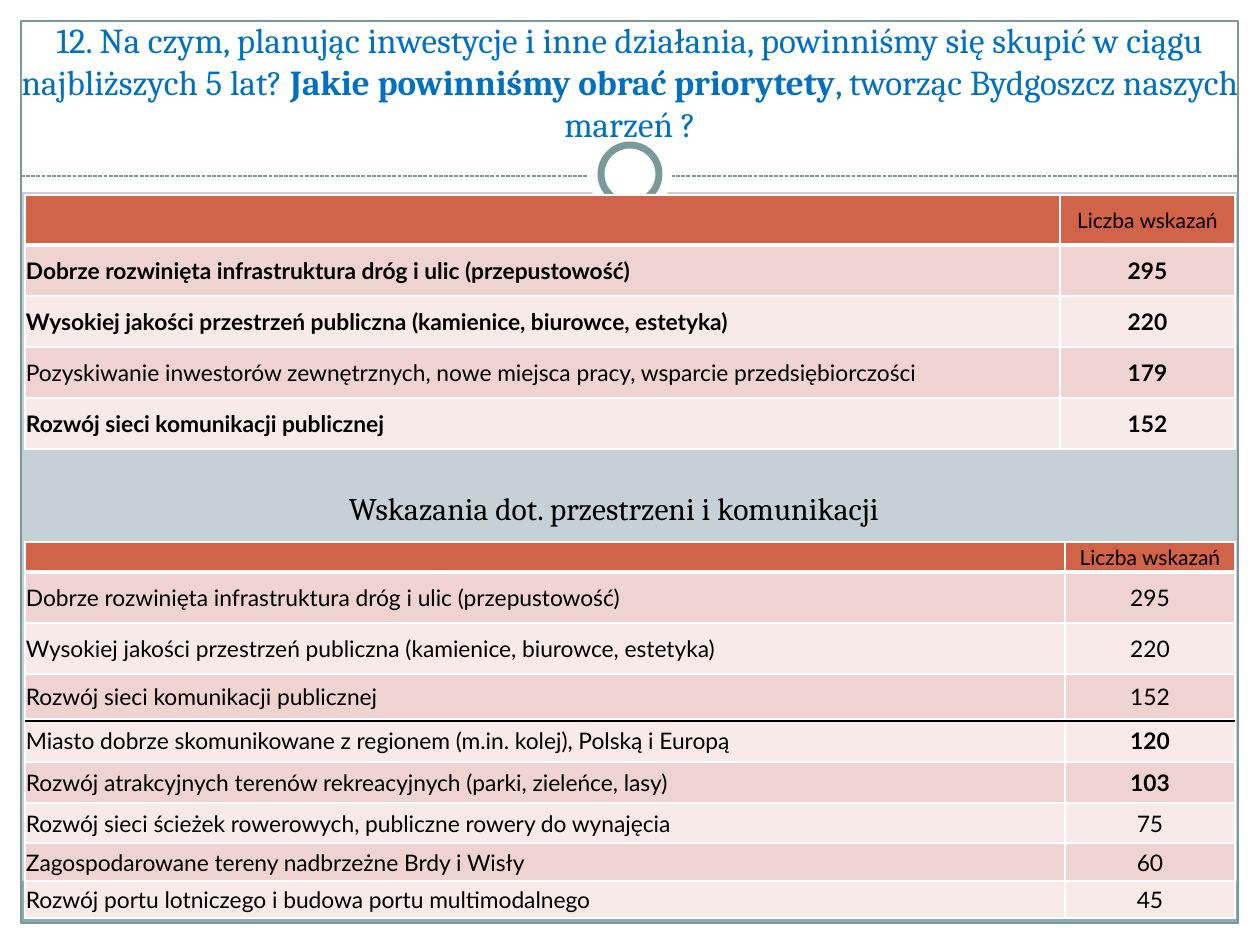
from lxml import etree
from pptx import Presentation
from pptx.dml.color import RGBColor
from pptx.enum import dml, shapes, text
from pptx.oxml.ns import qn
from pptx.util import Pt

PX = 914400 / 126
WHITE = RGBColor(0xFF, 0xFF, 0xFF)
BLACK = RGBColor(0, 0, 0)
BACKDROP = RGBColor(0xC5, 0xD1, 0xD7)
FOOTER = RGBColor(0x8C, 0xAD, 0xAE)
FRAME = RGBColor(0x7C, 0x99, 0x9A)
BLUE = RGBColor(0x00, 0x70, 0xC0)
HEADER = RGBColor(0xD1, 0x63, 0x49)
BANDS = [RGBColor(0xEE, 0xD3, 0xD0), RGBColor(0xF7, 0xEA, 0xE9)]

# Content
TITLE = [
    ("12. Na czym, planując inwestycje i inne działania, powinniśmy się skupić "
     "w ciągu najbliższych 5 lat? ", False),
    ("Jakie powinniśmy obrać priorytety", True),
    (", tworząc Bydgoszcz naszych marzeń ?", False),
]
SUBTITLE = "Wskazania dot. przestrzeni i komunikacji"
COUNT_LABEL = "Liczba wskazań"
ROADS = "Dobrze rozwinięta infrastruktura dróg i ulic (przepustowość)"
PUBLIC_SPACE = "Wysokiej jakości przestrzeń publiczna (kamienice, biurowce, estetyka)"
TRANSIT = "Rozwój sieci komunikacji publicznej"

# Rows: label, count, label bold, count bold, height
PRIORITIES = [
    (ROADS, 295, True, True, 51),
    (PUBLIC_SPACE, 220, True, True, 51),
    ("Pozyskiwanie inwestorów zewnętrznych, nowe miejsca pracy, wsparcie "
     "przedsiębiorczości", 179, False, True, 51),
    (TRANSIT, 152, True, True, 51),
]
SPACE_AND_TRANSIT = [
    (ROADS, 295, False, False, 51),
    (PUBLIC_SPACE, 220, False, False, 51),
    (TRANSIT, 152, False, False, 45),
    ("Miasto dobrze skomunikowane z regionem (m.in. kolej), Polską i Europą",
     120, False, True, 43),
    ("Rozwój atrakcyjnych terenów rekreacyjnych (parki, zieleńce, lasy)",
     103, False, True, 41),
    ("Rozwój sieci ścieżek rowerowych, publiczne rowery do wynajęcia",
     75, False, False, 40),
    ("Zagospodarowane tereny nadbrzeżne Brdy i Wisły", 60, False, False, 38),
    ("Rozwój portu lotniczego i budowa portu multimodalnego", 45, False, False, 37),
]

# Shapes: kind, left, top, width, height, fill, line colour, line width
RECT, OVAL = shapes.MSO_SHAPE.RECTANGLE, shapes.MSO_SHAPE.OVAL
DECOR = [
    (RECT, 0, 924, 1260, 21, WHITE, None, 0),
    (RECT, 0, 0, 1260, 192, WHITE, None, 0),
    (RECT, 0, 0, 21, 945, WHITE, None, 0),
    (RECT, 1239, 0, 21, 945, WHITE, None, 0),
    (RECT, 21, 881, 1217, 43, FOOTER, None, 0),
    (RECT, 21, 21, 1217, 902, None, FRAME, 0.75),
]
RINGS = [
    (OVAL, 588, 132, 84, 84, WHITE, None, 0),
    (OVAL, 601, 145, 58, 58, WHITE, FRAME, 4),
]


def px(*values):
    return [round(value * PX) for value in values]


def add_span(para, words, font, size, color, bold=False):
    span = para.add_run()
    span.text = words
    span.font.name, span.font.size, span.font.bold = font, Pt(size), bold
    span.font.color.rgb = color


def add_decor(page, kind, left, top, width, height, fill, line, weight):
    shape = page.shapes.add_shape(kind, *px(left, top, width, height))
    shape.shadow.inherit = False
    if fill is None:
        shape.fill.background()
    else:
        shape.fill.solid()
        shape.fill.fore_color.rgb = fill
    if line is None:
        shape.line.fill.background()
    else:
        shape.line.color.rgb = line
        shape.line.width = Pt(weight)


def add_rule(page, left, right, y, color, weight):
    rule = page.shapes.add_connector(
        shapes.MSO_CONNECTOR.STRAIGHT, *px(left, y, right, y))
    rule.line.color.rgb = color
    rule.line.width = Pt(weight)
    etree.SubElement(rule.element.spPr, qn("a:effectLst"))
    return rule


def format_cell(cell, words, bold, size, fill, centred, bottom_weight):
    # Borders come before the fill in the cell properties
    props = cell._tc.get_or_add_tcPr()
    for side, weight in zip("LRTB", (1, 1, 1, bottom_weight)):
        edge = etree.SubElement(props, qn(f"a:ln{side}"), w=str(Pt(weight)))
        paint = etree.SubElement(edge, qn("a:solidFill"))
        etree.SubElement(paint, qn("a:srgbClr"), val=str(WHITE))
    cell.fill.solid()
    cell.fill.fore_color.rgb = fill
    cell.margin_left, cell.margin_right, cell.margin_top = px(1, 1, 1)
    cell.margin_bottom = 0
    cell.vertical_anchor = text.MSO_ANCHOR.MIDDLE
    para = cell.text_frame.paragraphs[0]
    para.alignment = text.PP_ALIGN.CENTER if centred else text.PP_ALIGN.LEFT
    if words:
        add_span(para, words, "Lato", size, BLACK, bold)
    else:
        etree.SubElement(para._p, qn("a:endParaRPr"), sz=str(size * 100))


def add_count_table(page, top, columns, header_height, rows):
    heights = [header_height] + [row[-1] for row in rows]
    frame = page.shapes.add_table(
        len(heights), 2, *px(25, top, sum(columns), sum(heights)))
    table = frame.table
    table.first_row = table.horz_banding = False
    for column, width in zip(table.columns, px(*columns)):
        column.width = width
    for row, height in zip(table.rows, px(*heights)):
        row.height = height
    for index, words in enumerate(("", COUNT_LABEL)):
        format_cell(table.cell(0, index), words, False, 12, HEADER, index == 1, 3)
    for index, (label, count, label_bold, count_bold, _) in enumerate(rows):
        fill = BANDS[index % 2]
        format_cell(table.cell(index + 1, 0), label, label_bold, 13, fill, False, 1)
        format_cell(table.cell(index + 1, 1), str(count), count_bold, 13, fill, True, 1)


def main():
    deck = Presentation()
    deck.slide_width, deck.slide_height = px(1260, 945)
    page = deck.slides.add_slide(deck.slide_layouts[5])
    page.background.fill.solid()
    page.background.fill.fore_color.rgb = BACKDROP

    # Frame, dashed divider and ring
    for part in DECOR:
        add_decor(page, *part)
    divider = add_rule(page, 21, 1239, 176, FRAME, 0.75)
    divider.line.dash_style = dml.MSO_LINE.SQUARE_DOT
    for part in RINGS:
        add_decor(page, *part)

    # Title, raised above the white band
    title = page.shapes.title
    title.element.getparent().append(title.element)
    title.left, title.top, title.width, title.height = px(0, 46, 1260, 105)
    title.text_frame.auto_size = text.MSO_AUTO_SIZE.NONE
    title.text_frame.vertical_anchor = text.MSO_ANCHOR.BOTTOM
    para = title.text_frame.paragraphs[0]
    para.alignment = text.PP_ALIGN.CENTER
    for words, bold in TITLE:
        add_span(para, words, "Cambria", 20, BLUE, bold)

    # Tables with the heading between them
    add_count_table(page, 195, (1035, 175), 50, PRIORITIES)
    box = page.shapes.add_textbox(*px(77, 483, 1074, 50))
    box.text_frame.word_wrap = True
    box.text_frame.auto_size = text.MSO_AUTO_SIZE.SHAPE_TO_FIT_TEXT
    para = box.text_frame.paragraphs[0]
    para.alignment = text.PP_ALIGN.CENTER
    add_span(para, SUBTITLE, "Cambria", 18, BLACK)
    add_count_table(page, 542, (1040, 170), 30, SPACE_AND_TRANSIT)

    # Line below the top three counts
    add_rule(page, 25, 1235, 721, BLACK, 1.25)
    deck.save("out.pptx")


if __name__ == "__main__":
    main()
